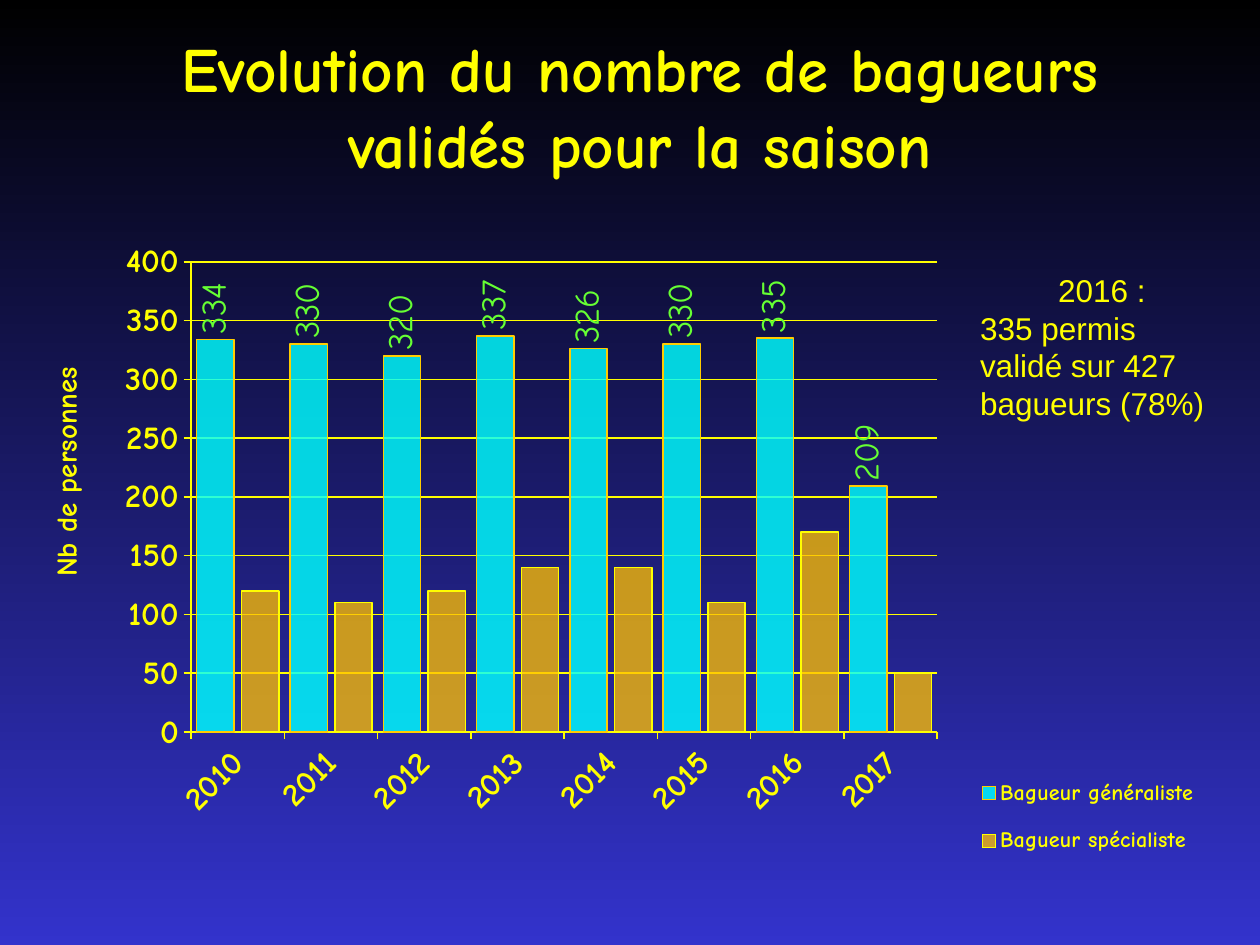
from lxml.etree import SubElement
from pptx import Presentation
from pptx.chart.data import CategoryChartData
from pptx.dml.color import RGBColor
from pptx.enum.chart import (XL_CHART_TYPE, XL_LABEL_POSITION, XL_LEGEND_POSITION,
                             XL_TICK_LABEL_POSITION, XL_TICK_MARK)
from pptx.enum.text import MSO_ANCHOR, PP_ALIGN
from pptx.oxml import parse_xml
from pptx.oxml.ns import nsdecls, qn
from pptx.util import Inches, Pt

COLORS = {"night": "000000", "blue": "3333CC", "yellow": "FFFF00", "cyan": "00FFFF",
          "amber": "FFC000", "gold": "FFCC00", "green": "66FF33"}
YEARS = [str(year) for year in range(2010, 2018)]
# name, values, fill, opacity in %, outline
SERIES = [
    ("Bagueur généraliste", (334, 330, 320, 337, 326, 330, 335, 209), "cyan", 82, "gold"),
    ("Bagueur spécialiste", (120, 110, 120, 140, 140, 110, 170, 50), "amber", 76, "yellow"),
]


def color(name):
    return RGBColor.from_string(COLORS[name])


def place(element, **fractions):
    """Give a chart part a manual layout, in fractions of the chart."""
    for old in element.findall(qn("c:layout")):
        element.remove(old)
    layout = parse_xml(f"<c:layout {nsdecls('c')}><c:manualLayout/></c:layout>")
    manual = layout[0]
    if element.tag == qn("c:plotArea"):
        SubElement(manual, qn("c:layoutTarget"), val="inner")
    for key in ("x", "y"):
        SubElement(manual, qn(f"c:{key}Mode"), val="edge")
    for key, value in fractions.items():
        SubElement(manual, qn(f"c:{key}"), val=str(value))
    overlay = element.find(qn("c:overlay"))
    element.insert(0 if overlay is None else element.index(overlay), layout)


def rotate(text_parent, degrees):
    body = text_parent.find(qn("c:txPr")).find(qn("a:bodyPr"))
    body.set("rot", str(degrees * 60000))
    body.set("vert", "horz")


class Slide:
    display_font, body_font = "Comic Neue", "Arial"

    def __init__(self, deck):
        self.page = deck.slides.add_slide(deck.slide_layouts[6])

    def background(self, top, bottom):
        fill = self.page.background.fill
        fill.gradient()
        fill.gradient_angle = 270
        for stop, name, position in zip(fill.gradient_stops, (top, bottom), (0, 1)):
            stop.color.rgb = color(name)
            stop.position = position

    def style(self, font, size, name="yellow", bold=True, face=None):
        font.name, font.size, font.bold = face or self.display_font, Pt(size), bold
        font.color.rgb = color(name)

    def text(self, at, paragraphs, size, face, bold=False, anchor=MSO_ANCHOR.TOP, shadow=False):
        box = self.page.shapes.add_textbox(*map(Inches, at))
        frame = box.text_frame
        frame.word_wrap, frame.vertical_anchor = True, anchor
        for index, (words, align) in enumerate(paragraphs):
            para = frame.add_paragraph() if index else frame.paragraphs[0]
            para.alignment = align
            span = para.add_run()
            span.text = words
            self.style(span.font, size, bold=bold, face=face)
            if shadow:
                span.font.fill._xPr.find(qn("a:solidFill")).addnext(parse_xml(
                    f'<a:effectLst {nsdecls("a")}><a:outerShdw dist="38100" dir="2700000">'
                    '<a:srgbClr val="000000"/></a:outerShdw></a:effectLst>'))

    def line(self, line_format, name="yellow"):
        line_format.color.rgb = color(name)
        line_format.width = Pt(0.86)

    def axis(self, axis):
        axis.major_tick_mark, axis.minor_tick_mark = XL_TICK_MARK.OUTSIDE, XL_TICK_MARK.NONE
        self.style(axis.tick_labels.font, 18.7)
        self.line(axis.format.line)

    def column_chart(self, at, categories, rows, axis_title):
        data = CategoryChartData(number_format="#,##0")
        data.categories = categories
        for name, values, *_ in rows:
            data.add_series(name, values)
        chart = self.page.shapes.add_chart(
            XL_CHART_TYPE.COLUMN_CLUSTERED, *map(Inches, at), data).chart
        chart.has_title = False
        self.style(chart.font, 19.8, "night")
        place(chart._chartSpace.chart.plotArea, x=0.174, y=0.071, w=0.6, h=0.7)

        # Axes
        years, people = chart.category_axis, chart.value_axis
        self.axis(years)
        self.axis(people)
        years.tick_label_position = XL_TICK_LABEL_POSITION.LOW
        rotate(years._element, -45)
        people.minimum_scale, people.maximum_scale, people.major_unit = 0, 400, 50
        people.tick_labels.number_format = "#,##0"
        people.tick_labels.number_format_is_linked = False
        self.line(people.major_gridlines.format.line)
        span = people.axis_title.text_frame.paragraphs[0].add_run()
        span.text = axis_title
        self.style(span.font, 16.5)
        body = people.axis_title.text_frame._txBody.bodyPr
        body.set("rot", "-5400000")
        body.set("vert", "horz")
        place(people.axis_title._element, x=0.054, y=0.22)

        # Columns
        plot = chart.plots[0]
        plot.gap_width, plot.overlap, plot.vary_by_categories = 30, -20, False
        for series, (_, _, fill, opacity, outline) in zip(plot.series, rows):
            series.invert_if_negative = False
            series.format.fill.solid()
            series.format.fill.fore_color.rgb = color(fill)
            paint = series._element.spPr.find(qn("a:solidFill"))[0]
            SubElement(paint, qn("a:alpha"), val=str(opacity * 1000))
            self.line(series.format.line, outline)
        labels = plot.series[0].data_labels
        labels.show_value, labels.position = True, XL_LABEL_POSITION.OUTSIDE_END
        self.style(labels.font, 19.8, "green", bold=False)
        rotate(labels._element, -90)

        # Legend
        chart.has_legend = True
        chart.legend.position = XL_LEGEND_POSITION.RIGHT
        chart.legend.include_in_layout = False
        self.style(chart.legend.font, 12.6)
        place(chart.legend._element, x=0.795, y=0.81, w=0.2, h=0.175)


def main():
    deck = Presentation()
    deck.slide_width, deck.slide_height = Inches(10), Inches(7.5)
    slide = Slide(deck)
    slide.background("night", "blue")

    # Title
    slide.text((0.83, 0.21, 8.5, 1.25),
               [("Evolution du nombre de bagueurs validés pour la saison", PP_ALIGN.CENTER)],
               36, slide.display_font, bold=True, anchor=MSO_ANCHOR.MIDDLE, shadow=True)

    # Ringers per year
    slide.column_chart((-0.2, 1.7, 9.87, 5.33), YEARS, SERIES, "Nb de personnes")

    # Comment on 2016
    slide.text((7.68, 2.1, 2.13, 1.31),
               [("2016 :", PP_ALIGN.CENTER),
                ("335 permis validé sur 427 bagueurs (78%)", PP_ALIGN.LEFT)],
               18, slide.body_font)
    deck.save("out.pptx")


if __name__ == "__main__":
    main()
